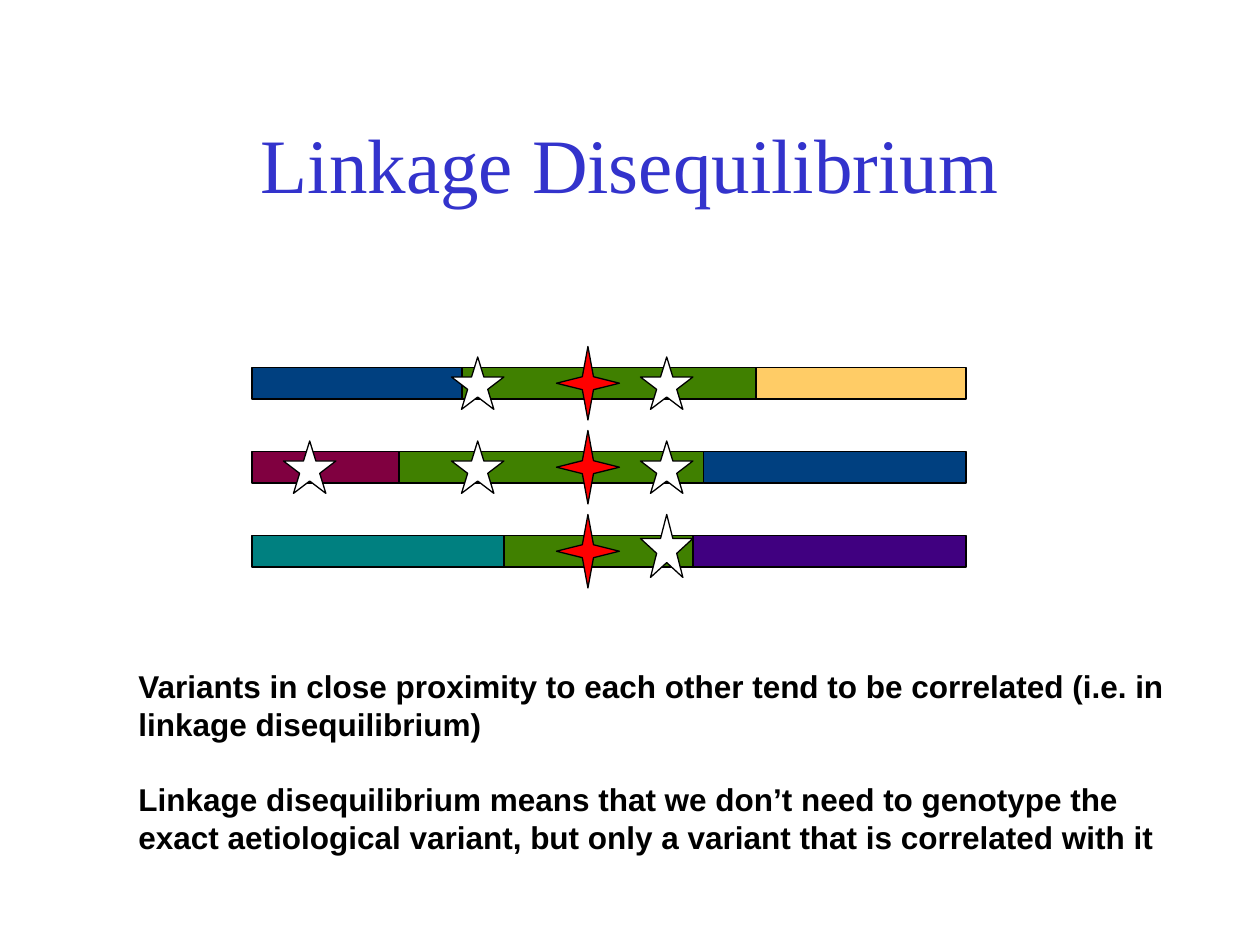
from typing import NamedTuple

from pptx import Presentation
from pptx.dml.color import RGBColor
from pptx.enum.shapes import MSO_SHAPE
from pptx.enum.text import MSO_ANCHOR, PP_ALIGN
from pptx.shapes.autoshape import Shape
from pptx.slide import Slide
from pptx.util import Pt

RECTANGLE = MSO_SHAPE.RECTANGLE
STAR_4 = MSO_SHAPE.STAR_4_POINT
STAR_5 = MSO_SHAPE.STAR_5_POINT
MIDDLE = MSO_ANCHOR.MIDDLE
CENTER = PP_ALIGN.CENTER

BLACK = RGBColor(0x00, 0x00, 0x00)
WHITE = RGBColor(0xFF, 0xFF, 0xFF)
RED = RGBColor(0xFF, 0x00, 0x00)
GREEN = RGBColor(0x40, 0x80, 0x00)
BLUE = RGBColor(0x00, 0x40, 0x80)
YELLOW = RGBColor(0xFF, 0xCC, 0x66)
MAROON = RGBColor(0x80, 0x00, 0x40)
TEAL = RGBColor(0x00, 0x80, 0x80)
PURPLE = RGBColor(0x40, 0x00, 0x80)
TITLE_BLUE = RGBColor(0x33, 0x33, 0xCC)

BAR_LEFT, BAR_RIGHT, BAR_HEIGHT = 144, 552, 18
FIRST_BAR_TOP, BAR_PITCH = 210, 48
VARIANT_LEFT, VARIANT_WIDTH, VARIANT_HEIGHT, VARIANT_RISE = 318, 36, 42, 12
MARKER_WIDTH = 30
LINE_PITCH = 21.5

FINDINGS = (
    "Variants in close proximity to each other tend to be correlated "
    "(i.e. in linkage disequilibrium)",
    "Linkage disequilibrium means that we don’t need to genotype the exact "
    "aetiological variant, but only a variant that is correlated with it",
)


class Segment(NamedTuple):
    left: float
    right: float
    color: RGBColor


class Chromosome(NamedTuple):
    """Segments run back to front; markers are the left edges of white stars."""
    segments: tuple[Segment, ...]
    markers: tuple[float, ...]
    marker_height: float = 30
    marker_rise: float = 6


CHROMOSOMES = (
    Chromosome((Segment(264, 432, GREEN), Segment(BAR_LEFT, 264, BLUE),
                Segment(432, BAR_RIGHT, YELLOW)), (258, 366)),
    Chromosome((Segment(222, 402, GREEN), Segment(BAR_LEFT, 228, MAROON),
                Segment(402, BAR_RIGHT, BLUE)), (162, 258, 366)),
    Chromosome((Segment(288, 396, GREEN), Segment(BAR_LEFT, 288, TEAL),
                Segment(396, BAR_RIGHT, PURPLE)), (366,), 36, 12),
)


def add_outlined(slide: Slide, kind: MSO_SHAPE, left: float, top: float,
                 width: float, height: float, color: RGBColor) -> Shape:
    shape = slide.shapes.add_shape(kind, Pt(left), Pt(top), Pt(width), Pt(height))
    shape.shadow.inherit = False
    shape.fill.solid()
    shape.fill.fore_color.rgb = color
    shape.line.color.rgb = BLACK
    shape.line.width = Pt(0.75)
    return shape


def add_chromosome(slide: Slide, chromosome: Chromosome, top: float) -> None:
    for left, right, color in chromosome.segments:
        add_outlined(slide, RECTANGLE, left, top, right - left, BAR_HEIGHT, color)
    variant = add_outlined(slide, STAR_4, VARIANT_LEFT, top - VARIANT_RISE,
                           VARIANT_WIDTH, VARIANT_HEIGHT, RED)
    variant.adjustments[0] = 0.125
    for left in chromosome.markers:
        add_outlined(slide, STAR_5, left, top - chromosome.marker_rise,
                     MARKER_WIDTH, chromosome.marker_height, WHITE)


def add_title(slide: Slide) -> None:
    frame = slide.shapes.add_textbox(Pt(54), Pt(48), Pt(612), Pt(90)).text_frame
    frame.word_wrap = True
    frame.vertical_anchor = MIDDLE
    heading = frame.paragraphs[0]
    heading.alignment = CENTER
    run = heading.add_run()
    run.text = "Linkage Disequilibrium"
    run.font.name = "Times New Roman"
    run.font.size = Pt(44)
    run.font.color.rgb = TITLE_BLUE


def add_findings(slide: Slide) -> None:
    frame = slide.shapes.add_textbox(Pt(72), Pt(378), Pt(603), Pt(117)).text_frame
    frame.word_wrap = True
    for index, finding in enumerate(FINDINGS):
        paragraph = frame.add_paragraph() if index else frame.paragraphs[0]
        paragraph.line_spacing = Pt(LINE_PITCH)
        if index:
            paragraph.space_before = Pt(LINE_PITCH)
        run = paragraph.add_run()
        run.text = finding
        run.font.name = "Arial"
        run.font.size = Pt(18)
        run.font.bold = True
        run.font.color.rgb = BLACK


def main() -> None:
    presentation = Presentation()
    presentation.slide_width = Pt(720)
    presentation.slide_height = Pt(540)
    slide = presentation.slides.add_slide(presentation.slide_layouts[6])
    add_title(slide)
    for row, chromosome in enumerate(CHROMOSOMES):
        add_chromosome(slide, chromosome, FIRST_BAR_TOP + row * BAR_PITCH)
    add_findings(slide)
    presentation.save("out.pptx")


if __name__ == "__main__":
    main()
